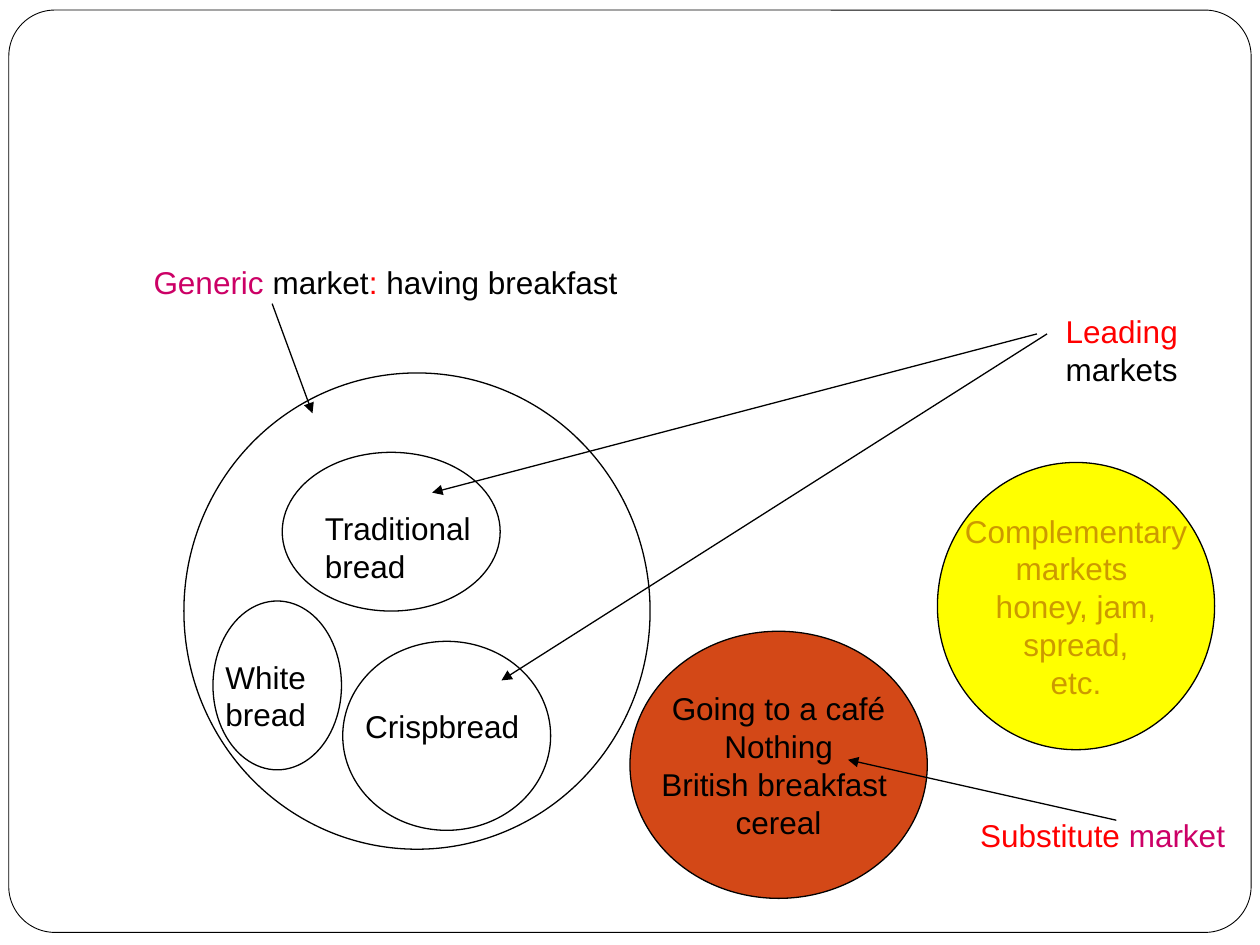
from itertools import cycle

from lxml.etree import SubElement
from pptx import Presentation
from pptx.dml.color import RGBColor
from pptx.enum.shapes import MSO_CONNECTOR, MSO_SHAPE
from pptx.enum.text import MSO_ANCHOR, MSO_AUTO_SIZE, PP_ALIGN
from pptx.oxml.ns import qn
from pptx.util import Inches, Pt

COLORS = {
    "black": "000000", "white": "FFFFFF", "red": "FF0000", "magenta": "CC0066",
    "rust": "D34817", "yellow": "FFFF00", "ochre": "CC9900",
}

deck = Presentation()
deck.slide_width, deck.slide_height = Inches(10), Inches(7.5)
slide = deck.slides.add_slide(deck.slide_layouts[6])

# Grid of 100 columns by 75 rows, with square cells
CELL = deck.slide_width / 100


def add_outlined(kind, area, fill=None, weight=0.75):
    shape = slide.shapes.add_shape(kind, *[round(n * CELL) for n in area])
    shape.shadow.inherit = False
    if fill:
        shape.fill.solid()
        shape.fill.fore_color.rgb = RGBColor.from_string(COLORS[fill])
    else:
        shape.fill.background()
    shape.line.color.rgb = RGBColor.from_string(COLORS["black"])
    shape.line.width = Pt(weight)
    return shape


def write(frame, lines, align):
    """Each line is a list of (text, colour) spans."""
    frame.word_wrap = False
    for index, spans in enumerate(lines):
        paragraph = frame.add_paragraph() if index else frame.paragraphs[0]
        paragraph.alignment = align
        paragraph.text = spans[0][0]
        for text, _ in spans[1:]:
            paragraph.add_run().text = text
        for run, (_, color) in zip(paragraph.runs, cycle(spans)):
            run.font.name = "Arial"
            run.font.size = Pt(18)
            run.font.color.rgb = RGBColor.from_string(COLORS[color])


# Rounded frame around the slide
frame = add_outlined(MSO_SHAPE.ROUNDED_RECTANGLE, (0.7, 0.8, 98.6, 73.2), "white", 0.5)
frame.adjustments[0] = 0.05

# Generic market with the three bread markets inside it
for circle in [
    (14.6, 29.6, 37, 37.8),     # generic market
    (22.4, 35.9, 17.3, 12.6),   # traditional bread
    (27.2, 50.9, 16.5, 15),     # crispbread
    (16.9, 47.7, 10.2, 13.4),   # white bread
]:
    add_outlined(MSO_SHAPE.OVAL, circle)

# Substitute and complementary markets
for area, fill, color, lines in [
    ((50, 50.1, 23.6, 21.2), "rust", "black",
     ["Going to a café", "Nothing", "British breakfast ", "cereal"]),
    ((74.4, 36.7, 22, 22.8), "yellow", "ochre",
     ["Complementary\vmarkets ", "honey, jam,", "spread,", "etc."]),
]:
    market = add_outlined(MSO_SHAPE.OVAL, area, fill)
    market.text_frame.vertical_anchor = MSO_ANCHOR.MIDDLE
    write(market.text_frame, [[(line, color)] for line in lines], PP_ALIGN.CENTER)

# Arrows from the labels to their markets
for ends in [
    (21.6, 24.1, 24.8, 32.8),   # generic
    (82.3, 26.5, 34.3, 39.1),   # leading: traditional bread
    (83.1, 26.5, 39.8, 54),     # leading: crispbread
    (88.6, 65.1, 67.3, 60.3),   # substitute
]:
    arrow = slide.shapes.add_connector(
        MSO_CONNECTOR.STRAIGHT, *[round(n * CELL) for n in ends])
    arrow.line.color.rgb = RGBColor.from_string(COLORS["black"])
    arrow.line.width = Pt(0.75)
    SubElement(arrow.line._get_or_add_ln(), qn("a:tailEnd"), type="triangle")
    SubElement(arrow._element.spPr, qn("a:effectLst"))

# Labels
for area, lines in [
    ((11.2, 20.4, 39.2, 4), [[("Generic ", "magenta"), ("market", "black"),
                              (": ", "red"), ("having breakfast", "black")]]),
    ((83.6, 24.3, 11, 7.1), [[("Leading", "red")], [("markets", "black")]]),
    ((76.8, 64.3, 21.7, 4), [[("Substitute ", "red"), ("market", "magenta")]]),
    ((24.8, 39.9, 13.7, 7.1), [[("Traditional\vbread", "black")]]),
    ((28, 55.6, 14.4, 4), [[("Crispbread", "black")]]),
    ((16.9, 51.7, 9.2, 7.1), [[("White \vbread", "black")]]),
]:
    label = slide.shapes.add_textbox(*[round(n * CELL) for n in area])
    label.text_frame.auto_size = MSO_AUTO_SIZE.SHAPE_TO_FIT_TEXT
    write(label.text_frame, lines, PP_ALIGN.LEFT)

deck.save("out.pptx")
